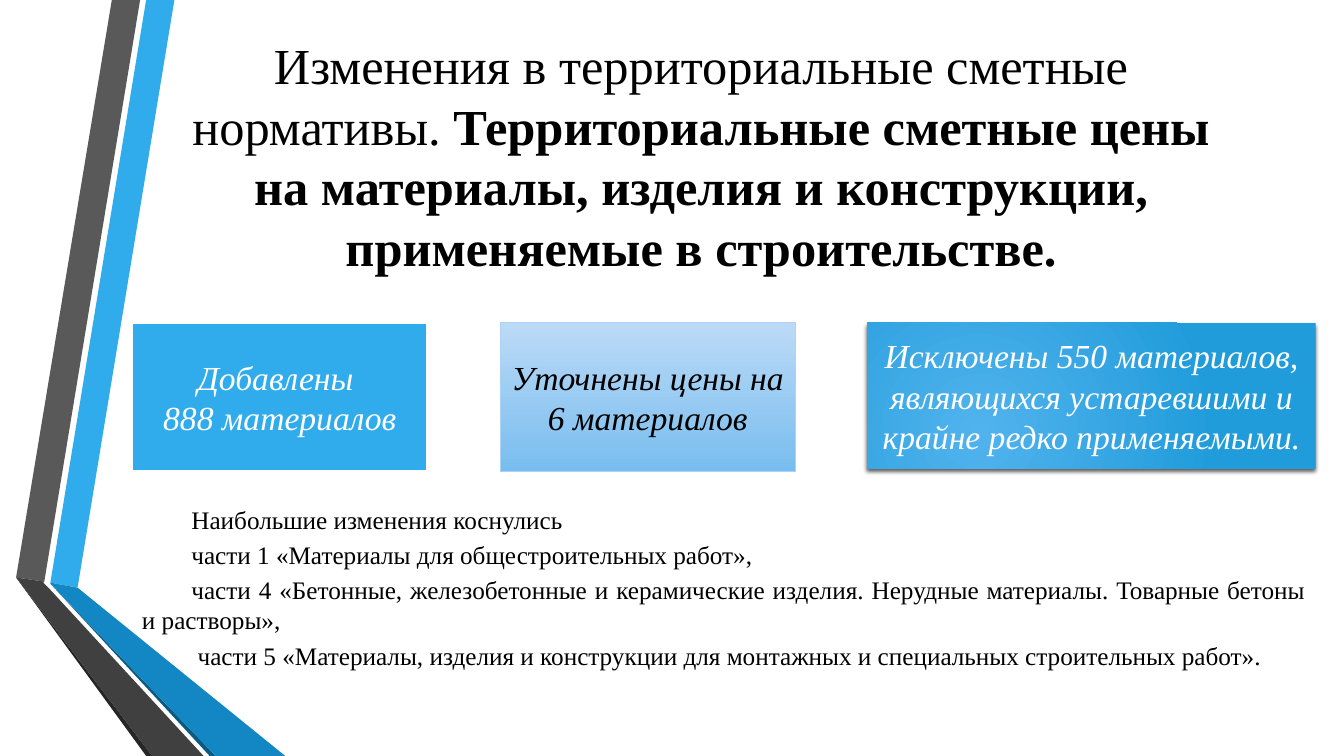
from dataclasses import dataclass

from lxml.etree import SubElement
from pptx import Presentation
from pptx.dml.color import RGBColor
from pptx.enum.shapes import MSO_SHAPE
from pptx.enum.text import MSO_ANCHOR, PP_ALIGN
from pptx.oxml import parse_xml
from pptx.oxml.ns import nsdecls, qn
from pptx.util import Inches, Pt


@dataclass(frozen=True)
class Theme:
    font: str = "Times New Roman"
    title_size: int = 36
    card_size: int = 24
    body_size: int = 18
    black: str = "000000"
    white: str = "FFFFFF"
    blue: str = "30ACEC"
    blue_fold: str = "1287C3"
    blue_edge: str = "0C5A82"
    gray: str = "595959"
    gray_fold: str = "404040"
    gray_edge: str = "262626"
    pale_line: str = "AED2F4"
    pale_gradient: tuple = ("BCDAF6", "78BDEF")
    bright_gradient: tuple = ("51B3ED", "219CDB")


THEME = Theme()

# Folded ribbon on the left: colour and outline of each facet, in inches
RIBBON = [
    (THEME.blue, [(0.5, 5.78), (0.77, 5.83), (1.73, 0), (1.45, 0)]),
    (THEME.gray, [(1.39, 0), (1.11, 0), (0.16, 5.73), (0.44, 5.77)]),
    (THEME.gray_edge, [(0.16, 5.73), (1.45, 7.5), (1.51, 7.5)]),
    (THEME.blue_edge, [(0.5, 5.79), (2.08, 7.5), (2.14, 7.5)]),
    (THEME.blue_fold, [(0.5, 5.79), (2.14, 7.5), (2.83, 7.5), (0.77, 5.83), (0.5, 5.78)]),
    (THEME.gray_fold, [(2.02, 7.5), (0.48, 5.83), (0.43, 5.78), (0.44, 5.77),
                       (0.16, 5.73), (1.51, 7.5)]),
]

TITLE = "Изменения в территориальные сметные нормативы. "
TITLE_BOLD = ("Территориальные сметные цены на материалы, изделия и конструкции, "
              "применяемые в строительстве.")

DETAILS = [
    "Наибольшие изменения коснулись",
    "части 1 «Материалы для общестроительных работ»,",
    "части 4 «Бетонные, железобетонные и керамические изделия. "
    "Нерудные материалы. Товарные бетоны и растворы»,",
    " части 5 «Материалы, изделия и конструкции для монтажных и специальных "
    "строительных работ».",
]


def format_run(run, size, color, bold=False, italic=False):
    run.font.name = THEME.font
    run.font.size = Pt(size)
    run.font.color.rgb = RGBColor.from_string(color)
    run.font.bold = bold
    run.font.italic = italic


def add_facet(slide, color, points):
    corners = [(Inches(x), Inches(y)) for x, y in points]
    builder = slide.shapes.build_freeform(*corners[0])
    builder.add_line_segments(corners[1:], close=True)
    shape = builder.convert_to_shape()
    shape.shadow.inherit = False
    shape.fill.solid()
    shape.fill.fore_color.rgb = RGBColor.from_string(color)
    shape.line.fill.background()


def add_text_frame(slide, left, top, width, height, anchor):
    box = slide.shapes.add_textbox(Inches(left), Inches(top), Inches(width), Inches(height))
    box.text_frame.word_wrap = True
    box.text_frame.vertical_anchor = anchor
    return box.text_frame


def add_title(slide):
    text_frame = add_text_frame(slide, 1.54, 1, 10.83, 1.79, MSO_ANCHOR.BOTTOM)
    paragraph = text_frame.paragraphs[0]
    paragraph.alignment = PP_ALIGN.CENTER
    for text, bold in ((TITLE, False), (TITLE_BOLD, True)):
        run = paragraph.add_run()
        run.text = text
        format_run(run, THEME.title_size, THEME.black, bold=bold)


def add_details(slide):
    text_frame = add_text_frame(slide, 1.31, 4.95, 11.74, 0.94, MSO_ANCHOR.TOP)
    text_frame.text = "\n".join(DETAILS)
    for paragraph in text_frame.paragraphs:
        paragraph.alignment = PP_ALIGN.JUSTIFY
        paragraph.space_before = Pt(0.2 * THEME.body_size)
        # First-line indent
        paragraph._p.get_or_add_pPr().set("indent", str(Inches(0.49)))
        format_run(paragraph.runs[0], THEME.body_size, THEME.black)


def add_card(slide, left, width, height, text, text_color):
    shape = slide.shapes.add_shape(
        MSO_SHAPE.RECTANGLE, Inches(left), Inches(3.2), Inches(width), Inches(height))
    shape.shadow.inherit = False
    text_frame = shape.text_frame
    text_frame.word_wrap = True
    text_frame.vertical_anchor = MSO_ANCHOR.MIDDLE
    text_frame.text = text
    for paragraph in text_frame.paragraphs:
        paragraph.alignment = PP_ALIGN.CENTER
        format_run(paragraph.runs[0], THEME.card_size, text_color, italic=True)
    return shape


def set_line(shape, color, width):
    shape.line.color.rgb = RGBColor.from_string(color)
    shape.line.width = Pt(width)


def set_gradient(shape, colors):
    shape.fill.gradient()
    shape.fill.gradient_angle = 270
    for stop, position, color in zip(shape.fill.gradient_stops, (0, 1), colors):
        stop.position = position
        stop.color.rgb = RGBColor.from_string(color)


def make_radial(shape):
    gradient = shape._element.spPr.find(qn("a:gradFill"))
    gradient.replace(gradient.find(qn("a:lin")), parse_xml(
        f'<a:path {nsdecls("a")} path="circle">'
        '<a:fillToRect l="50000" t="100000" r="100000" b="50000"/></a:path>'))


def add_drop_shadow(shape):
    effects = shape._element.spPr.find(qn("a:effectLst"))
    shadow = SubElement(effects, qn("a:outerShdw"), blurRad=str(Pt(3)), dist=str(Pt(2)),
                        dir="5400000", algn="ctr", rotWithShape="0")
    color = SubElement(shadow, qn("a:srgbClr"), val=THEME.black)
    SubElement(color, qn("a:alpha"), val="64000")


def add_cards(slide):
    added = add_card(slide, 1.31, 2.93, 1.48, "Добавлены \n888 материалов", THEME.white)
    added.fill.solid()
    added.fill.fore_color.rgb = RGBColor.from_string(THEME.blue)
    set_line(added, THEME.white, 1.75)

    updated = add_card(slide, 4.96, 2.93, 1.48, "Уточнены цены на 6 материалов", THEME.black)
    set_gradient(updated, THEME.pale_gradient)
    set_line(updated, THEME.pale_line, 0.75)

    removed = add_card(
        slide, 8.6, 4.45, 1.45,
        "Исключены 550 материалов, являющихся устаревшими и крайне редко применяемыми.",
        THEME.white)
    set_gradient(removed, THEME.bright_gradient)
    make_radial(removed)
    removed.line.fill.background()
    add_drop_shadow(removed)


def main():
    presentation = Presentation()
    presentation.slide_width = Inches(13.33)
    presentation.slide_height = Inches(7.5)
    slide = presentation.slides.add_slide(presentation.slide_layouts[6])

    # Decoration
    for color, points in RIBBON:
        add_facet(slide, color, points)

    # Content
    add_title(slide)
    add_details(slide)
    add_cards(slide)
    presentation.save("out.pptx")


if __name__ == "__main__":
    main()
